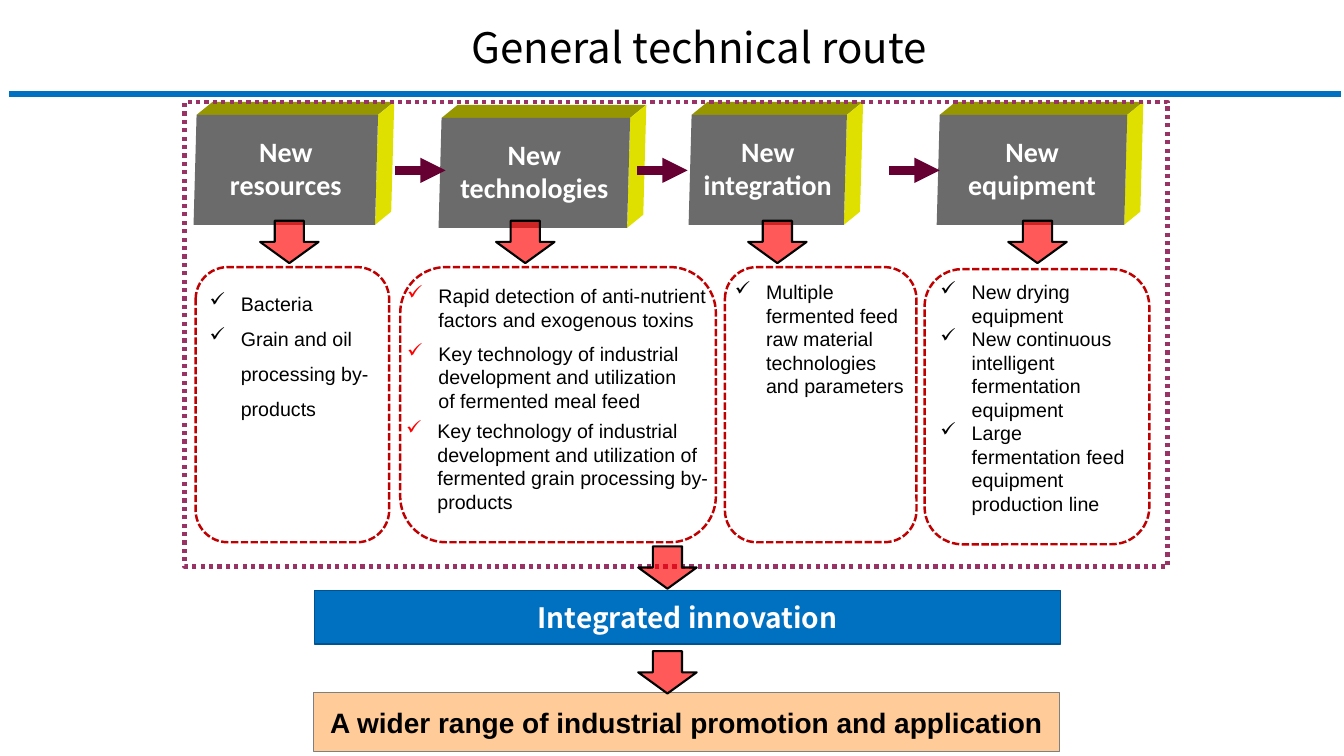
"""Build the general technical route slide."""
import pptx
import pptx.dml.color
import pptx.enum.dml
import pptx.enum.shapes
import pptx.enum.text
import pptx.oxml
import pptx.oxml.ns
import pptx.util

Inches = pptx.util.Inches
Pt = pptx.util.Pt
RGBColor = pptx.dml.color.RGBColor
SHAPE = pptx.enum.shapes.MSO_SHAPE
DASH = pptx.enum.dml.MSO_LINE
ANCHOR = pptx.enum.text.MSO_ANCHOR
ALIGN = pptx.enum.text.PP_ALIGN

BLACK = RGBColor(0x00, 0x00, 0x00)
WHITE = RGBColor(0xFF, 0xFF, 0xFF)
BLUE = RGBColor(0x00, 0x70, 0xC0)
DARK_BLUE = RGBColor(0x00, 0x53, 0x8E)
PEACH = RGBColor(0xFF, 0xCC, 0x99)
GRAY = RGBColor(0x7F, 0x7F, 0x7F)
RED = RGBColor(0xFF, 0x00, 0x00)
DARK_RED = RGBColor(0xC0, 0x00, 0x00)
PLUM = RGBColor(0x99, 0x33, 0x66)
DARK_PLUM = RGBColor(0x66, 0x00, 0x33)
BLOCK_FRONT = RGBColor(0x6B, 0x6B, 0x6B)
BLOCK_TOP = RGBColor(0x96, 0x96, 0x00)
BLOCK_SIDE = RGBColor(0xE0, 0xE0, 0x00)

TITLE = "General technical route"
BLOCKS = [
    ("New resources", 1.92, 1.14, 1.83),
    ("New technologies", 4.35, 1.17, 1.9),
    ("New integration", 6.83, 1.14, 1.57),
    ("New equipment", 9.29, 1.14, 1.89),
]
PANELS = [(1.94, 2.65, 1.92), (3.97, 2.65, 3.13), (7.19, 2.65, 1.9), (9.17, 2.67, 2.23)]
LISTS = [
    (1.98, 2.73, 1.88, 1.5, BLACK, 25, ["Bacteria", "Grain and oil processing by-products"]),
    (3.94, 2.77, 3.19, 0.57, RED, None,
     ["Rapid detection of anti-nutrient factors and exogenous toxins"]),
    (3.94, 3.34, 2.93, 0.81, RED, None,
     ["Key technology of industrial development and utilization of fermented meal feed"]),
    (3.93, 4.11, 3.24, 1.04, RED, None,
     ["Key technology of industrial development and utilization of "
      "fermented grain processing by-products"]),
    (7.19, 2.73, 1.9, 1.28, BLACK, None,
     ["Multiple fermented feed raw material technologies and parameters"]),
    (9.23, 2.73, 2.14, 2.46, BLACK, None,
     ["New drying equipment",
      "New continuous intelligent fermentation equipment",
      "Large fermentation feed equipment production line"]),
]
OUTCOMES = [
    ("Integrated innovation", 3.12, 5.86, 0.53, BLUE, DARK_BLUE, 1, WHITE, "Noto Sans CJK SC"),
    ("A wider range of industrial promotion and application",
     3.11, 6.87, 0.59, PEACH, GRAY, 0.75, BLACK, "Arial"),
]
STEP_ARROWS = [3.92, 6.32, 8.82]
DOWN_ARROWS = [(2.58, 2.19), (4.92, 2.19), (7.42, 2.19), (10, 2.19), (6.33, 5.42), (6.33, 6.46)]

BLOCK_HEIGHT, SKEW, DEPTH_X, DEPTH_Y = 1.09, 0.03, 0.16, 0.13
INDENT = Inches(0.31)


def add_xml(parent, tag, **attributes):
    child = parent.makeelement(pptx.oxml.ns.qn(tag), attributes)
    parent.append(child)
    return child


def paint(shape, fill=None, line=None, weight=1, dash=None):
    shape.shadow.inherit = False
    if fill is None:
        shape.fill.background()
    else:
        shape.fill.solid()
        shape.fill.fore_color.rgb = fill
    if line is None:
        shape.line.fill.background()
    else:
        shape.line.color.rgb = line
        shape.line.width = Pt(weight)
        if dash is not None:
            shape.line.dash_style = dash


def style(paragraph, size, face, color, bold=False):
    for run in paragraph.runs:
        run.font.size = Pt(size)
        run.font.name = face
        run.font.bold = bold
        run.font.color.rgb = color


def set_label(shape, text, size, face, color, bold, anchor, insets):
    frame = shape.text_frame
    frame.text = text
    frame.word_wrap = True
    frame.vertical_anchor = anchor
    frame.margin_left, frame.margin_top, frame.margin_right, frame.margin_bottom = map(Inches, insets)
    frame.paragraphs[0].alignment = ALIGN.CENTER
    style(frame.paragraphs[0], size, face, color, bold)


def add_preset(shapes, kind, left, top, width, height, **look):
    shape = shapes.add_shape(kind, Inches(left), Inches(top), Inches(width), Inches(height))
    paint(shape, **look)
    return shape


def add_face(shapes, corners, color):
    points = [(Inches(x), Inches(y)) for x, y in corners]
    builder = shapes.build_freeform(*points[0])
    builder.add_line_segments(points[1:], close=True)
    face = builder.convert_to_shape()
    paint(face, color)
    return face


def add_block(shapes, text, left, top, width):
    right, bottom = left + width, top + BLOCK_HEIGHT
    top_left, top_right = (left + SKEW, top), (right, top)
    bottom_right, bottom_left = (right - SKEW, bottom), (left, bottom)
    back = [(x + DEPTH_X, y - DEPTH_Y) for x, y in (top_left, top_right, bottom_right)]
    add_face(shapes, [top_left, back[0], back[1], top_right], BLOCK_TOP)
    add_face(shapes, [top_right, back[1], back[2], bottom_right], BLOCK_SIDE)
    front = add_face(shapes, [top_left, top_right, bottom_right, bottom_left], BLOCK_FRONT)
    set_label(front, text, 20, "Calibri", WHITE, True, ANCHOR.TOP, (0.1, 0.19, 0.1, 0.1))


def add_step_arrow(shapes, left):
    arrow = shapes.add_connector(pptx.enum.shapes.MSO_CONNECTOR.STRAIGHT,
                                 Inches(left), Inches(1.69), Inches(left + 0.5), Inches(1.69))
    arrow.line.color.rgb = DARK_PLUM
    arrow.line.width = Pt(6)
    add_xml(arrow.line._get_or_add_ln(), "a:tailEnd", type="triangle")
    add_xml(arrow._element.spPr, "a:effectLst")


def add_list(shapes, left, top, width, height, check_color, spacing, items):
    frame = shapes.add_textbox(Inches(left), Inches(top), Inches(width), Inches(height)).text_frame
    frame.word_wrap = True
    frame.text = "\n".join(items)
    for paragraph in frame.paragraphs:
        if spacing:
            paragraph.line_spacing = Pt(spacing)
        properties = paragraph._p.get_or_add_pPr()
        properties.set("marL", str(INDENT))
        properties.set("indent", str(-INDENT))
        add_xml(add_xml(properties, "a:buClr"), "a:srgbClr", val=str(check_color))
        add_xml(properties, "a:buChar", char="✓")
        style(paragraph, 14, "Arial", BLACK)


def main():
    deck = pptx.Presentation()
    deck.slide_width, deck.slide_height = Inches(13.33), Inches(7.5)
    shapes = deck.slides.add_slide(deck.slide_layouts[6]).shapes

    title = shapes.add_textbox(Inches(4.5), Inches(0.16), Inches(4.87), Inches(0.61))
    set_label(title, TITLE, 30, "Noto Sans CJK SC", BLACK, False, ANCHOR.TOP, (0.1, 0.05, 0.1, 0.05))
    for block in BLOCKS:
        add_block(shapes, *block)
    for left in STEP_ARROWS:
        add_step_arrow(shapes, left)
    add_preset(shapes, SHAPE.RECTANGLE, 1.83, 1.01, 9.75, 4.61,
               line=PLUM, weight=3, dash=DASH.ROUND_DOT)
    for left, top, width in PANELS:
        add_preset(shapes, SHAPE.ROUNDED_RECTANGLE, left, top, width, 2.73,
                   line=DARK_RED, weight=1.75, dash=DASH.SQUARE_DOT)
    for entry in LISTS:
        add_list(shapes, *entry)
    for text, left, top, height, fill, line, weight, color, face in OUTCOMES:
        outcome = add_preset(shapes, SHAPE.RECTANGLE, left, top, 7.4, height,
                             fill=fill, line=line, weight=weight)
        set_label(outcome, text, 20, face, color, True, ANCHOR.MIDDLE, (0, 0, 0, 0))
    for left, top in DOWN_ARROWS:
        arrow = add_preset(shapes, SHAPE.DOWN_ARROW, left, top, 0.58, 0.42,
                           fill=RED, line=BLACK, weight=1.5)
        tint = arrow._element.spPr.find(pptx.oxml.ns.qn("a:solidFill"))[0]
        add_xml(tint, "a:alpha", val="65000")
    add_preset(shapes, SHAPE.MATH_MINUS, -2.31, 0.76, 18.01, 0.35, fill=BLUE, line=WHITE, weight=1.5)
    deck.save("out.pptx")


if __name__ == "__main__":
    main()
